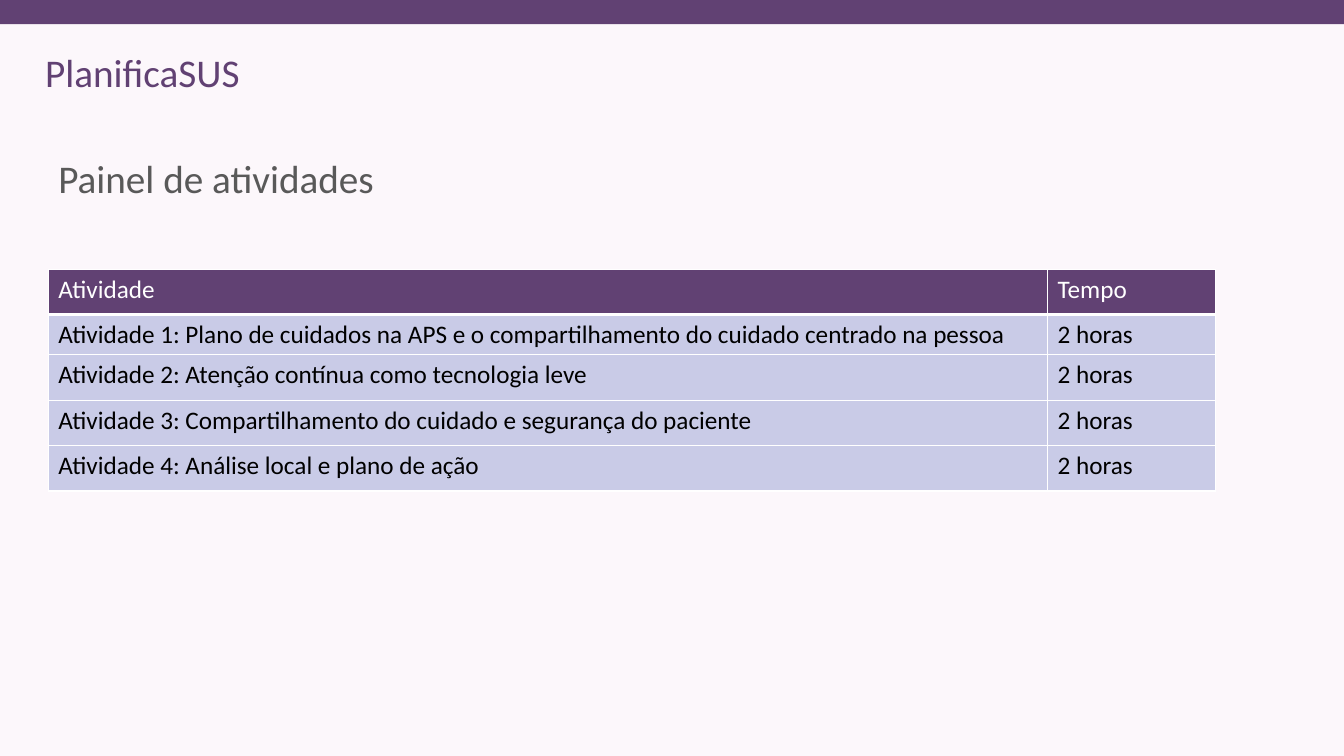
from dataclasses import dataclass

import lxml.etree
import pptx
import pptx.dml.color
import pptx.enum.shapes
import pptx.enum.text
import pptx.oxml.ns
import pptx.util

Inches = pptx.util.Inches
Pt = pptx.util.Pt

COLORS = {
    "background": "FCF7FB",
    "purple": "614173",
    "gray": "595959",
    "lavender": "C9CBE7",
    "white": "FFFFFF",
    "black": "000000",
}
FONT = "Calibri"
COLUMN_WIDTHS = (9.91, 1.67)
ROW_HEIGHTS = (0.45, 0.39, 0.45, 0.45, 0.45)
HEADER = ("Atividade", "Tempo")
DURATION = "2 horas"
ACTIVITIES = (
    "Atividade 1: Plano de cuidados na APS e o compartilhamento do cuidado centrado na pessoa",
    "Atividade 2: Atenção contínua como tecnologia leve",
    "Atividade 3: Compartilhamento do cuidado e segurança do paciente",
    "Atividade 4: Análise local e plano de ação",
)


@dataclass(frozen=True)
class Heading:
    text: str
    left: float
    top: float
    width: float
    height: float
    color: str
    wrap: bool
    anchor: pptx.enum.text.MSO_ANCHOR
    line_spacing: float


HEADINGS = (
    Heading("PlanificaSUS", 0.35, 0.43, 2.15, 0.57, "purple", False,
            pptx.enum.text.MSO_ANCHOR.TOP, 1.0),
    Heading("Painel de atividades", 0.48, 1.07, 10.99, 1.45, "gray", True,
            pptx.enum.text.MSO_ANCHOR.MIDDLE, 0.9),
)


def rgb(name: str) -> pptx.dml.color.RGBColor:
    return pptx.dml.color.RGBColor.from_string(COLORS[name])


def format_text(text_frame, size: float, color: str) -> None:
    for paragraph in text_frame.paragraphs:
        for run in paragraph.runs:
            run.font.name = FONT
            run.font.size = Pt(size)
            run.font.bold = False
            run.font.color.rgb = rgb(color)


def add_top_band(slide) -> None:
    band = slide.shapes.add_shape(
        pptx.enum.shapes.MSO_SHAPE.RECTANGLE, 0, 0, Inches(13.33), Inches(0.24))
    band.shadow.inherit = False
    band.fill.solid()
    band.fill.fore_color.rgb = rgb("purple")
    band.line.fill.background()


def add_heading(slide, heading: Heading) -> None:
    box = slide.shapes.add_textbox(
        Inches(heading.left), Inches(heading.top),
        Inches(heading.width), Inches(heading.height))
    text_frame = box.text_frame
    text_frame.text = heading.text
    text_frame.word_wrap = heading.wrap
    text_frame.vertical_anchor = heading.anchor
    text_frame.paragraphs[0].line_spacing = heading.line_spacing
    format_text(text_frame, 28, heading.color)


def set_borders(cell, top: float, bottom: float) -> None:
    """Draw white cell borders, with top and bottom widths in points."""
    properties = cell._tc.get_or_add_tcPr()
    widths = {"a:lnL": 1, "a:lnR": 1, "a:lnT": top, "a:lnB": bottom}
    for position, (tag, width) in enumerate(widths.items()):
        line = lxml.etree.Element(pptx.oxml.ns.qn(tag), w=str(Pt(width)))
        fill = lxml.etree.SubElement(line, pptx.oxml.ns.qn("a:solidFill"))
        lxml.etree.SubElement(fill, pptx.oxml.ns.qn("a:srgbClr"), val=COLORS["white"])
        properties.insert(position, line)


def add_activity_table(slide) -> None:
    rows = [HEADER] + [(activity, DURATION) for activity in ACTIVITIES]
    table = slide.shapes.add_table(
        len(rows), len(HEADER), Inches(0.48), Inches(2.67),
        Inches(sum(COLUMN_WIDTHS)), Inches(sum(ROW_HEIGHTS))).table
    table.horz_banding = False
    for column, width in zip(table.columns, COLUMN_WIDTHS):
        column.width = Inches(width)
    for row, height in zip(table.rows, ROW_HEIGHTS):
        row.height = Inches(height)
    for row_index, texts in enumerate(rows):
        is_header = row_index == 0
        for column_index, text in enumerate(texts):
            cell = table.cell(row_index, column_index)
            cell.text_frame.text = text
            format_text(cell.text_frame, 18, "white" if is_header else "black")
            cell.fill.solid()
            cell.fill.fore_color.rgb = rgb("purple" if is_header else "lavender")
            set_borders(cell, top=3 if row_index == 1 else 1,
                        bottom=3 if is_header else 1)


def main() -> None:
    presentation = pptx.Presentation()
    presentation.slide_width = Inches(13.33)
    presentation.slide_height = Inches(7.5)
    slide = presentation.slides.add_slide(presentation.slide_layouts[6])
    slide.background.fill.solid()
    slide.background.fill.fore_color.rgb = rgb("background")
    add_top_band(slide)
    for heading in HEADINGS:
        add_heading(slide, heading)
    add_activity_table(slide)
    presentation.save("out.pptx")


if __name__ == "__main__":
    main()
